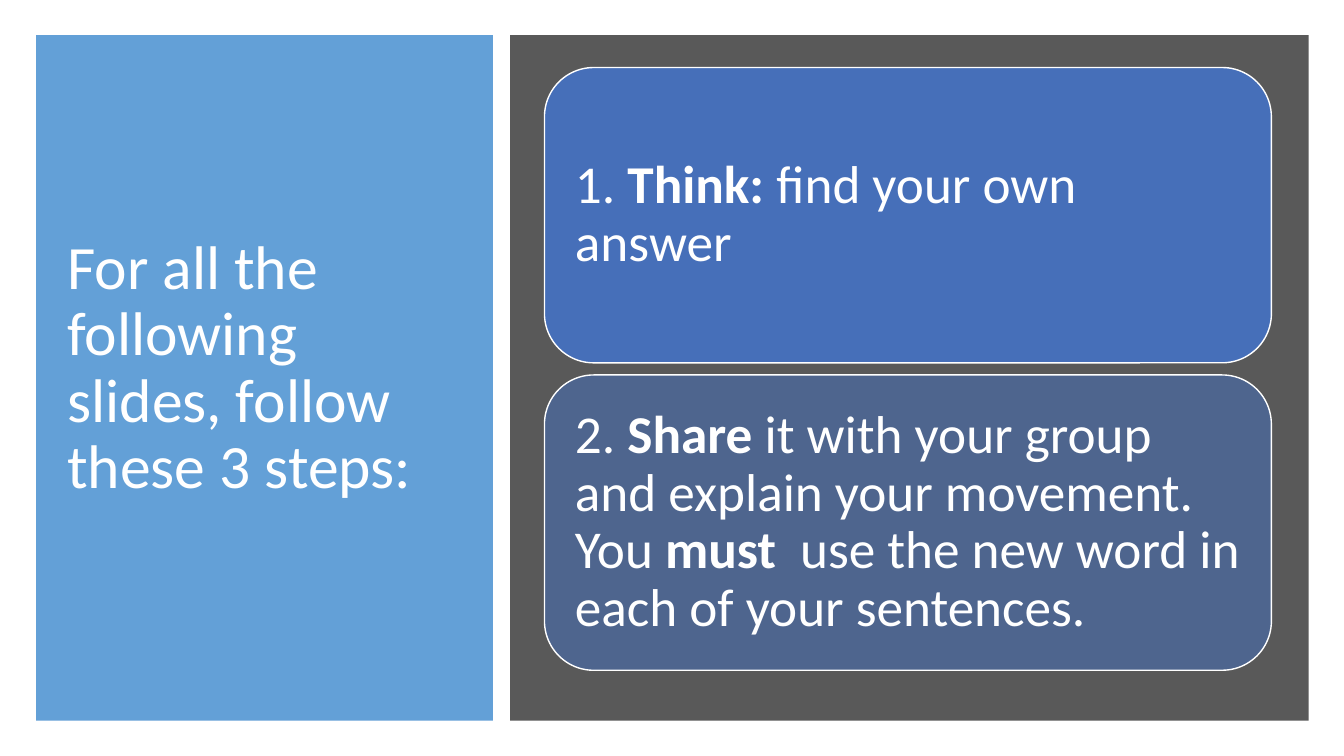
from lxml import etree
from pptx import Presentation
from pptx.dml.color import RGBColor
from pptx.enum.shapes import MSO_SHAPE
from pptx.enum.text import MSO_ANCHOR, PP_ALIGN
from pptx.oxml.ns import qn
from pptx.util import Inches, Pt

RECTANGLE = MSO_SHAPE.RECTANGLE
ROUNDED = MSO_SHAPE.ROUNDED_RECTANGLE
MIDDLE = MSO_ANCHOR.MIDDLE
LEFT = PP_ALIGN.LEFT

WHITE = RGBColor(0xFF, 0xFF, 0xFF)
SKY = RGBColor(0x5B, 0x9B, 0xD5)
GREY = RGBColor(0x59, 0x59, 0x59)
BLUE = RGBColor(0x44, 0x72, 0xC4)

FONT = "Calibri"
CARD_TOP = 0.67
CARD_STEP = 3.05

TITLE = [("For all the following slides, follow these 3 steps:", False)]
# Each step: opacity in percent, then (text, bold) spans.
STEPS = [
    (90, [("1. ", False), ("Think:", True), (" find your own answer", False)]),
    (50, [("2. ", False), ("Share", True),
          (" it with your group and explain your movement. You ", False),
          ("must ", True),
          (" use the new word in each of your sentences.", False)]),
]


def add_box(page, kind, left, top, width, height, color, opacity=100):
    box = page.shapes.add_shape(
        kind, Inches(left), Inches(top), Inches(width), Inches(height))
    box.shadow.inherit = False
    box.fill.solid()
    box.fill.fore_color.rgb = color
    box.line.fill.background()
    if opacity < 100:
        color_node = box.fill._xPr.find(qn("a:solidFill"))[0]
        alpha = etree.SubElement(color_node, qn("a:alpha"))
        alpha.set("val", str(opacity * 1000))
    return box


def write_text(box, spans, size):
    """Fill the box with one white, vertically centred paragraph."""
    frame = box.text_frame
    frame.word_wrap = True
    frame.vertical_anchor = MIDDLE
    para = frame.paragraphs[0]
    para.alignment = LEFT
    para.line_spacing = 0.9
    para.font.name = FONT
    para.font.size = Pt(size)
    para.font.color.rgb = WHITE
    for text, bold in spans:
        span = para.add_run()
        span.text = text
        span.font.bold = bold


def add_step_card(page, top, opacity, spans):
    card = add_box(page, ROUNDED, 5.4, top, 7.21, 2.93, BLUE, opacity)
    card.line.color.rgb = WHITE
    card.line.width = Pt(1)
    frame = card.text_frame
    frame.margin_left = frame.margin_right = Inches(0.16)
    frame.margin_top = frame.margin_bottom = Inches(0.16)
    write_text(card, spans, 38)


def main():
    deck = Presentation()
    deck.slide_width = Inches(13.33)
    deck.slide_height = Inches(7.5)
    page = deck.slides.add_slide(deck.slide_layouts[6])

    add_box(page, RECTANGLE, 0.36, 0.35, 4.53, 6.8, SKY, 95)
    title = page.shapes.add_textbox(
        Inches(0.57), Inches(0.64), Inches(4.07), Inches(6.04))
    write_text(title, TITLE, 44)

    add_box(page, RECTANGLE, 5.06, 0.35, 7.92, 6.8, GREY)
    for index, (opacity, spans) in enumerate(STEPS):
        add_step_card(page, CARD_TOP + index * CARD_STEP, opacity, spans)

    deck.save("out.pptx")


if __name__ == "__main__":
    main()
